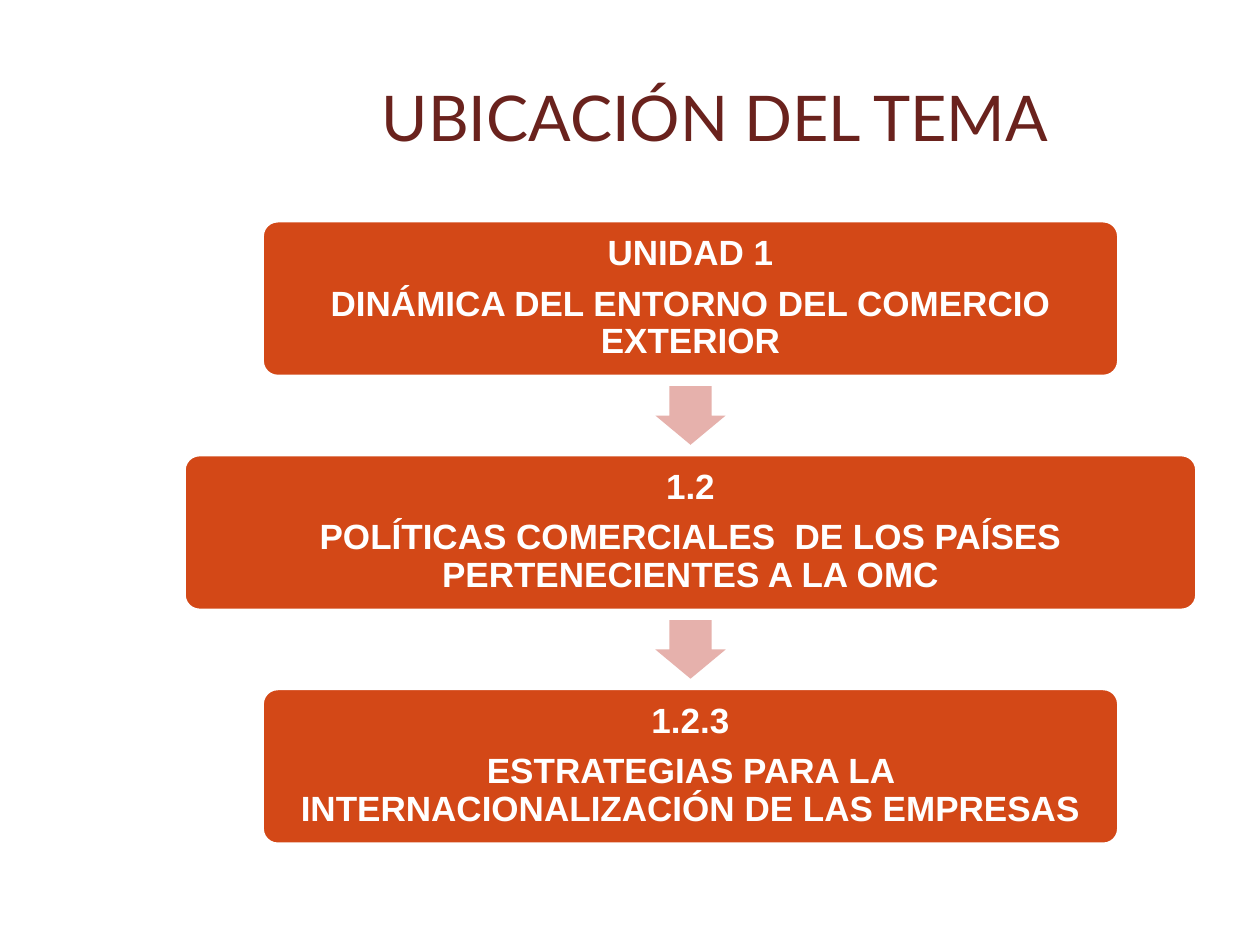
from dataclasses import dataclass

from pptx import Presentation
from pptx.dml.color import RGBColor
from pptx.enum.shapes import MSO_SHAPE
from pptx.enum.text import MSO_ANCHOR, PP_ALIGN
from pptx.util import Cm, Pt


@dataclass(frozen=True)
class Theme:
    """Colours, fonts and type sizes of the slide."""
    heading: str = "6A221D"
    level: str = "D34817"
    arrow: str = "E6B1AC"
    light: str = "FFFFFF"
    heading_font: str = "Lato"
    level_font: str = "Arial"
    heading_size: int = 36
    level_size: int = 20


@dataclass(frozen=True)
class Box:
    """A region of the slide, in centimetres."""
    left: float
    top: float
    width: float
    height: float

    def lengths(self):
        """Return the four sides as slide lengths."""
        return Cm(self.left), Cm(self.top), Cm(self.width), Cm(self.height)


THEME = Theme()
LEVELS = [
    (17.27, ["UNIDAD 1", "DINÁMICA DEL ENTORNO DEL COMERCIO EXTERIOR"]),
    (20.42, ["1.2", "POLÍTICAS COMERCIALES  DE LOS PAÍSES PERTENECIENTES A LA OMC"]),
    (17.27, ["1.2.3", "ESTRATEGIAS PARA LA INTERNACIONALIZACIÓN DE LAS EMPRESAS"]),
]


def write(frame, lines, *, font, size, color, bold=False, spacing=1.0, after=0, inset=None):
    """Write centred paragraphs into a text frame."""
    frame.word_wrap = True
    frame.vertical_anchor = MSO_ANCHOR.MIDDLE
    if inset is not None:
        frame.margin_left = frame.margin_right = Cm(inset)
        frame.margin_top = frame.margin_bottom = Cm(inset)
    frame.text = "\n".join(lines)
    for paragraph in frame.paragraphs:
        paragraph.alignment = PP_ALIGN.CENTER
        paragraph.line_spacing = spacing
        paragraph.space_before = Pt(0)
        paragraph.space_after = Pt(after)
        for run in paragraph.runs:
            run.font.name = font
            run.font.size = Pt(size)
            run.font.bold = bold
            run.font.color.rgb = RGBColor.from_string(color)


def add_block(slide, preset, box, fill, adjustments):
    """Add a flat filled shape without an outline."""
    block = slide.shapes.add_shape(preset, *box.lengths())
    block.shadow.inherit = False
    block.fill.solid()
    block.fill.fore_color.rgb = RGBColor.from_string(fill)
    block.line.fill.background()
    for index, value in enumerate(adjustments):
        block.adjustments[index] = value
    return block


def place_heading(slide, box):
    """Move the title placeholder into the box and fill it."""
    heading = slide.shapes.title
    heading.left, heading.top, heading.width, heading.height = box.lengths()
    write(heading.text_frame, ["UBICACIÓN DEL TEMA"], font=THEME.heading_font,
          size=THEME.heading_size, color=THEME.heading)


def place_level(slide, box, lines):
    """Draw one level of the course outline."""
    level = add_block(slide, MSO_SHAPE.ROUNDED_RECTANGLE, box, THEME.level, [0.1])
    level.line.color.rgb = RGBColor.from_string(THEME.light)
    level.line.width = Pt(2)
    write(level.text_frame, lines, font=THEME.level_font, size=THEME.level_size,
          color=THEME.light, bold=True, spacing=0.9, after=7, inset=0.2)


def place_arrow(slide, gap):
    """Centre a downward arrow in the gap between two levels."""
    length, breadth = 1.18, 1.42
    box = Box(gap.left + (gap.width - length) / 2,
              gap.top + (gap.height - breadth) / 2, length, breadth)
    arrow = add_block(slide, MSO_SHAPE.RIGHT_ARROW, box, THEME.arrow, [0.6, 0.5])
    arrow.rotation = 90


def place_outline(slide, box, level_height):
    """Stack the levels evenly in the box, joined by arrows."""
    gap = (box.height - len(LEVELS) * level_height) / (len(LEVELS) - 1)
    for index, (width, lines) in enumerate(LEVELS):
        top = box.top + index * (level_height + gap)
        if index:
            place_arrow(slide, Box(box.left, top - gap, box.width, gap))
        left = box.left + (box.width - width) / 2
        place_level(slide, Box(left, top, width, level_height), lines)


def main():
    """Build the slide and save it."""
    deck = Presentation()
    deck.slide_width, deck.slide_height = Cm(25.4), Cm(19.05)
    slide = deck.slides.add_slide(deck.slide_layouts[5])
    place_heading(slide, Box(4.7, 0.76, 19.43, 3.18))
    place_outline(slide, Box(3.71, 4.45, 20.42, 12.57), level_height=3.14)
    deck.save("out.pptx")


if __name__ == "__main__":
    main()
